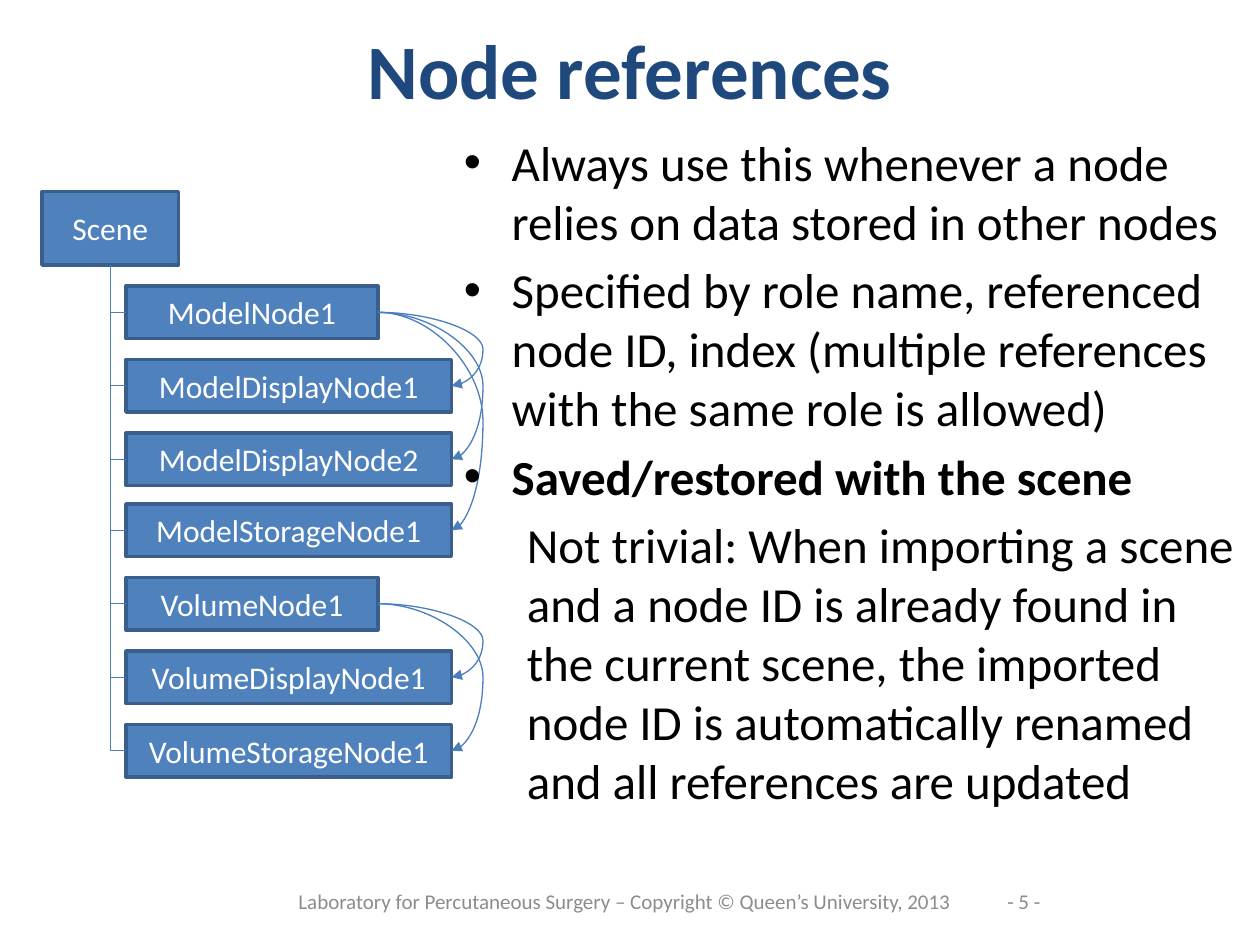
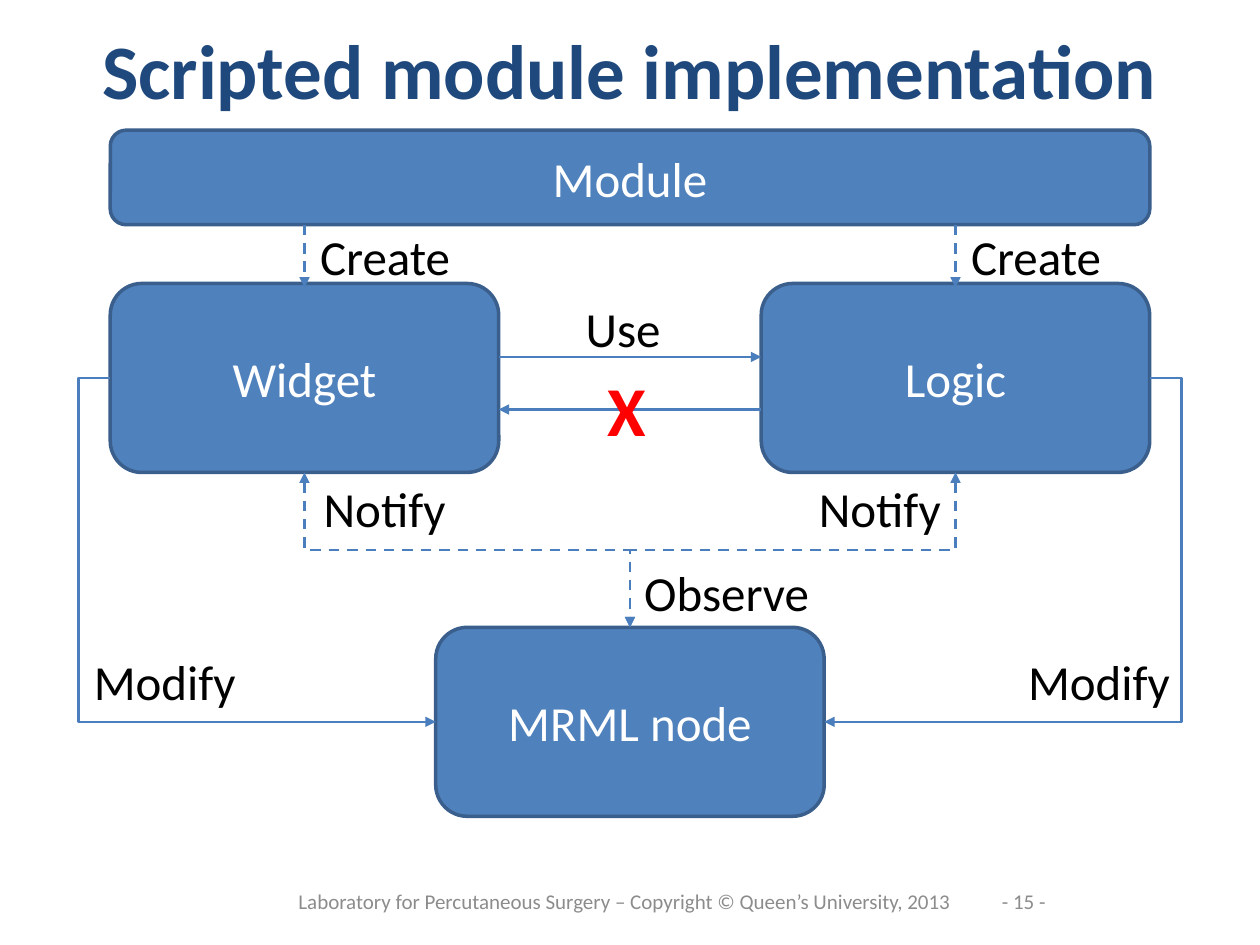
from lxml.etree import SubElement
from pptx import Presentation
from pptx.dml.color import RGBColor
from pptx.enum.dml import MSO_LINE
from pptx.enum.shapes import MSO_CONNECTOR, MSO_SHAPE
from pptx.enum.text import MSO_ANCHOR, PP_ALIGN
from pptx.oxml.ns import qn
from pptx.util import Inches, Pt

UNIT = Inches(1) / 12
COLUMNS, ROWS = 120, 90
FONT = "Calibri"
FILL, EDGE, LINK = "4F81BD", "3A5F8C", "4B7EBC"
NAVY, GRAY, BLACK, WHITE, RED = "1F497D", "8C8C8C", "000000", "FFFFFF", "FF0000"
LEFT, CENTER, RIGHT = PP_ALIGN.LEFT, PP_ALIGN.CENTER, PP_ALIGN.RIGHT
TOP, MIDDLE = MSO_ANCHOR.TOP, MSO_ANCHOR.MIDDLE
STRAIGHT, ELBOW, CURVE = MSO_CONNECTOR.STRAIGHT, MSO_CONNECTOR.ELBOW, MSO_CONNECTOR.CURVE


def write(page, text, cell, shape=None, size=28, color=BLACK, bold=False, align=LEFT, anchor=TOP):
    place = [round(length * UNIT) for length in cell]
    if shape is None:
        box = page.shapes.add_textbox(*place)
    else:
        box = page.shapes.add_shape(shape, *place)
        box.shadow.inherit = False
        box.fill.solid()
        box.fill.fore_color.rgb = RGBColor.from_string(FILL)
        box.line.color.rgb = RGBColor.from_string(EDGE)
        box.line.width = Pt(2)
    box.text_frame.word_wrap = True
    box.text_frame.vertical_anchor = anchor
    box.text_frame.text = text
    for para in box.text_frame.paragraphs:
        para.alignment = align
        for span in para.runs:
            span.font.name = FONT
            span.font.size = Pt(size)
            span.font.bold = bold
            span.font.color.rgb = RGBColor.from_string(color)
    return box


def link(page, kind, start, end, width=1.5, via=None, falling=False, preset=None,
         dashed=False, head=False, tail=True):
    (x1, y1), (x2, y2) = start, end
    corners = [x1, y1, x2, y2]
    if falling:
        middle_x, middle_y = (x1 + x2) / 2, (y1 + y2) / 2
        half_height = abs(x2 - x1) / 2
        half_width = (y2 - y1) / 2 if x2 > x1 else (y1 - y2) / 2
        corners = [middle_x + half_width, middle_y - half_height,
                   middle_x - half_width, middle_y + half_height]
    line = page.shapes.add_connector(kind, *[round(length * UNIT) for length in corners])
    line.line.color.rgb = RGBColor.from_string(LINK)
    line.line.width = Pt(width)
    if dashed:
        line.line.dash_style = MSO_LINE.DASH
    properties = line._element.spPr
    if falling:
        turn = 270 if x2 > x1 else 90
        properties.find(qn("a:xfrm")).set("rot", str(turn * 60000))
    geometry = properties.find(qn("a:prstGeom"))
    if preset:
        geometry.set("prst", preset)
    if via is not None:
        share = round((via - x1) / (x2 - x1) * 100000)
        SubElement(geometry.find(qn("a:avLst")), qn("a:gd"), name="adj1", fmla=f"val {share}")
    outline = properties.find(qn("a:ln"))
    for shown, tag in ((head, "a:headEnd"), (tail, "a:tailEnd")):
        if shown:
            SubElement(outline, qn(tag), type="triangle")
    SubElement(properties, qn("a:effectLst"))


deck = Presentation()
deck.slide_width, deck.slide_height = round(COLUMNS * UNIT), round(ROWS * UNIT)
pages = []
for title, number in (("Node references", 5), ("Scripted module implementation", 15)):
    page = deck.slides.add_slide(deck.slide_layouts[6])
    write(page, f"- {number} -", (94, 83.4, 7, 4.8), size=12, color=GRAY, align=CENTER, anchor=MIDDLE)
    write(page, "Laboratory for Percutaneous Surgery – Copyright © Queen’s University, 2013",
          (25, 83.4, 69, 4.8), size=12, color=GRAY, align=CENTER, anchor=MIDDLE)
    write(page, title, (6, 0, 108, 13), size=44, color=NAVY, bold=True, align=CENTER, anchor=MIDDLE)
    pages.append(page)
references, module = pages

node_format = dict(shape=MSO_SHAPE.RECTANGLE, size=18, color=WHITE, align=CENTER, anchor=MIDDLE)
write(references, "Scene", (4, 18.25, 13, 7), **node_format)
node_left, node_height, owner_width, child_width = 12, 5, 24, 31
families = (
    (27.25, ("ModelNode1", "ModelDisplayNode1", "ModelDisplayNode2", "ModelStorageNode1")),
    (55, ("VolumeNode1", "VolumeDisplayNode1", "VolumeStorageNode1")),
)
for first_row, names in families:
    for index, name in enumerate(names):
        row = 48 if name == "ModelStorageNode1" else first_row + 7 * index
        node_width = child_width if index else owner_width
        center = row + node_height / 2
        write(references, name, (node_left, row, node_width, node_height), **node_format)
        link(references, ELBOW, (10.5, 25.25), (node_left, center), width=0.75,
             falling=True, preset="bentConnector2", tail=False)
        if index:
            link(references, CURVE, (node_left + owner_width, first_row + node_height / 2),
                 (node_left + child_width, center), width=0.75, via=46)

points = (
    "Always use this whenever a node relies on data stored in other nodes",
    "Specified by role name, referenced node ID, index (multiple references with the same role is allowed)",
    "Saved/restored with the scene",
    "Not trivial: When importing a scene and a node ID is already found in the current scene, "
    "the imported node ID is automatically renamed and all references are updated",
)
body = write(references, "\n".join(points), (43, 12, 77, 29.75))
paragraphs = body.text_frame.paragraphs
for para in paragraphs[1:]:
    para.space_before = Pt(5.6)
for para in paragraphs[:3]:
    layout = para._p.get_or_add_pPr()
    layout.set("marL", str(Inches(0.38)))
    layout.set("indent", str(-Inches(0.38)))
    SubElement(layout, qn("a:buFont"), typeface="Arial")
    SubElement(layout, qn("a:buChar"), char="•")
paragraphs[2].runs[0].font.bold = True
paragraphs[3].level = 1
paragraphs[3]._p.get_or_add_pPr().set("marL", str(Inches(0.5)))

part_width, part_height = 37, 18
widget_left, logic_left, node_left = 10.5, 72.5, 41.5
module_row, widget_row, node_row = 12.4, 27, 59.75
parts = (
    ("Module", (widget_left, module_row, 99, 9)),
    ("Widget", (widget_left, widget_row, part_width, part_height)),
    ("Logic", (logic_left, widget_row, part_width, part_height)),
    ("MRML node", (node_left, node_row, part_width, part_height)),
)
for name, cell in parts:
    write(module, name, cell, shape=MSO_SHAPE.ROUNDED_RECTANGLE, color=WHITE, align=CENTER, anchor=MIDDLE)

widget_right, node_right = widget_left + part_width, node_left + part_width
widget_middle, node_middle = widget_row + part_height / 2, node_row + part_height / 2
sides = (
    (widget_left, widget_left, node_left, -3),
    (logic_left, logic_left + part_width, node_right, 3),
)
for left, outer, target, offset in sides:
    center = left + part_width / 2
    link(module, STRAIGHT, (center, module_row + 9), (center, widget_row + 0.4), dashed=True)
    link(module, ELBOW, (center, widget_row + part_height), (COLUMNS / 2, node_row),
         falling=True, dashed=True, head=True)
    link(module, ELBOW, (outer, widget_middle), (target, node_middle), via=outer + offset)
    write(module, "Create", (center + 0.3, 21, 18.25, 8))
link(module, STRAIGHT, (widget_right, 34), (logic_left, 34))
link(module, STRAIGHT, (logic_left, 39), (widget_right, 39))

labels = (
    ("Modify", (5, 61.5, 21.4, 8), CENTER),
    ("Modify", (93.75, 61.5, 18.85, 8), RIGHT),
    ("Notify", (29.65, 45, 21.4, 8), LEFT),
    ("Notify", (76.8, 45, 21.4, 8), LEFT),
    ("Observe", (58.5, 53, 21.4, 8), CENTER),
    ("Use", (54.6, 27.8, 21.4, 8), LEFT),
)
for text, cell, align in labels:
    write(module, text, cell, align=align)
write(module, "X", (56.65, 34.3, 21.4, 8), size=40, color=RED, bold=True)

deck.save("out.pptx")
